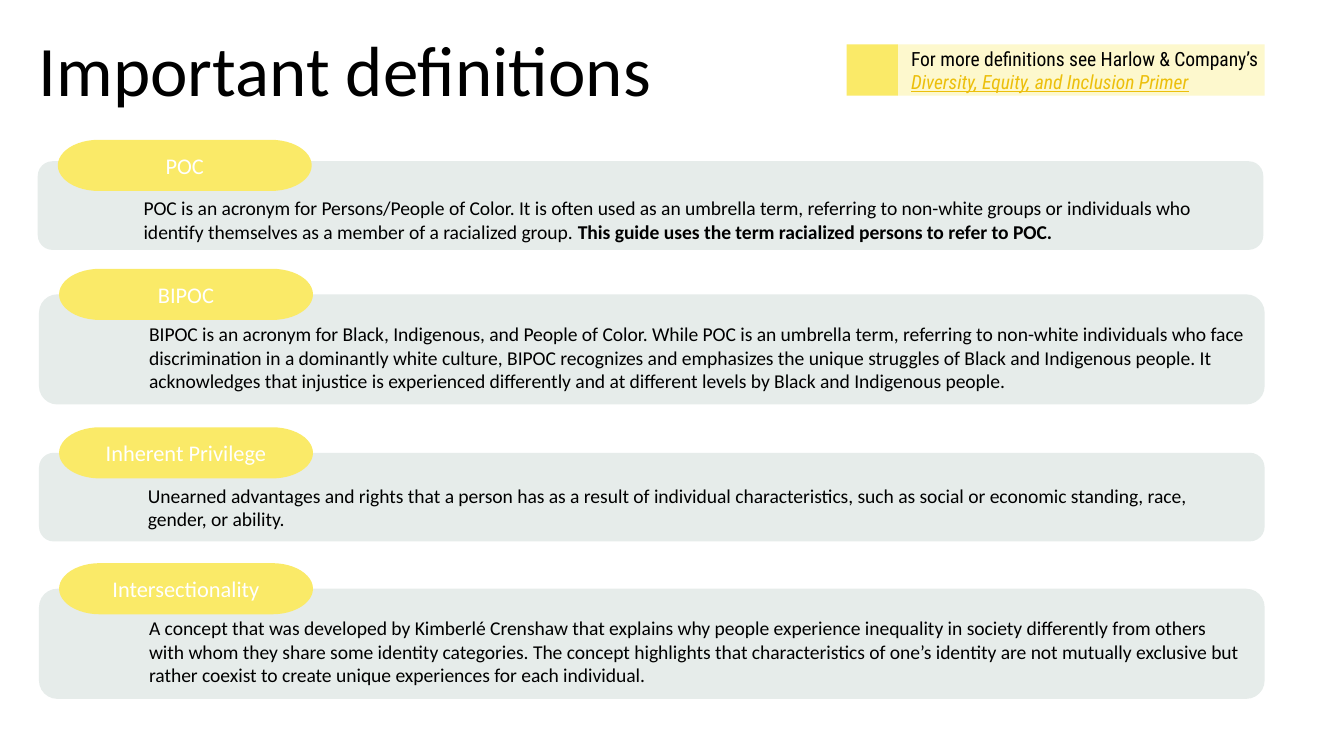
import pptx
import pptx.dml.color
import pptx.enum.shapes
import pptx.enum.text
import pptx.util

Pt = pptx.util.Pt
RGBColor = pptx.dml.color.RGBColor
SHAPE = pptx.enum.shapes.MSO_SHAPE
ANCHOR = pptx.enum.text.MSO_ANCHOR
ALIGN = pptx.enum.text.PP_ALIGN

BLACK = RGBColor(0x00, 0x00, 0x00)
WHITE = RGBColor(0xFF, 0xFF, 0xFF)
YELLOW = RGBColor(0xFA, 0xEA, 0x68)
PALE_YELLOW = RGBColor(0xFD, 0xF8, 0xCD)
PALE_GREEN = RGBColor(0xE6, 0xEC, 0xEA)
GOLD = RGBColor(0xEC, 0xBF, 0x0B)

TITLE = {"name": "Calibri", "size": Pt(38)}
BODY = {"name": "Calibri", "size": Pt(10.5)}
BOLD = {**BODY, "bold": True}
LABEL = {"name": "Calibri", "size": Pt(12), "color": WHITE}
CALLOUT = {"name": "Roboto Condensed", "size": Pt(10.5)}
LINK = {**CALLOUT, "color": GOLD, "italic": True, "underline": True}
CALLOUT_MARGINS = {"margin_top": 0, "margin_bottom": 0, "margin_right": 0}

PANEL_WIDTH = 656.6
PILL_WIDTH, PILL_HEIGHT = 136, 27.4
PILL_INDENT = 10.8
TEXT_INDENT = 49

# Panel left, top, height, rise of the pill above it, label, text
DEFINITIONS = [
    (20.9, 157.7, 59, 13.7, "BIPOC",
     "BIPOC is an acronym for Black, Indigenous, and People of Color. While POC is an "
     "umbrella term, referring to non-white individuals who face discrimination in a "
     "dominantly white culture, BIPOC recognizes and emphasizes the unique struggles of "
     "Black and Indigenous people. It acknowledges that injustice is experienced "
     "differently and at different levels by Black and Indigenous people."),
    (20.9, 315.4, 59, 13.7, "Intersectionality",
     "A concept that was developed by Kimberlé Crenshaw that explains why people "
     "experience inequality in society differently from others with whom they share some "
     "identity categories. The concept highlights that characteristics of one’s identity "
     "are not mutually exclusive but rather coexist to create unique experiences for each "
     "individual."),
    (20.9, 242.6, 47.5, 13.7, "Inherent Privilege",
     "Unearned advantages and rights that a person has as a result of individual "
     "characteristics, such as social or economic standing, race, gender, or ability."),
    (20.2, 86.4, 47.5, 11.5, "POC", None),
]
POC_RUNS = [
    ("POC is an acronym for Persons/People of Color. It is often used as an umbrella term, "
     "referring to non-white groups or individuals who identify themselves as a member of a "
     "racialized group. ", BODY),
    ("This guide uses the term racialized persons to refer to POC.", BOLD),
]


def write_text(shape, runs, anchor, align=ALIGN.LEFT, indent=0):
    """Write (text, format) runs as the single paragraph of a shape."""
    frame = shape.text_frame
    frame.word_wrap = True
    frame.vertical_anchor = anchor
    paragraph = frame.paragraphs[0]
    paragraph.alignment = align
    if indent:
        properties = paragraph._p.get_or_add_pPr()
        properties.set("marL", str(Pt(indent)))
        properties.set("indent", "0")
    for text, values in runs:
        run = paragraph.add_run()
        run.text = text
        run.font.color.rgb = values.get("color", BLACK)
        for name, value in values.items():
            if name != "color":
                setattr(run.font, name, value)
    return paragraph


def add_filled_shape(shapes, kind, left, top, width, height, color):
    shape = shapes.add_shape(kind, Pt(left), Pt(top), Pt(width), Pt(height))
    shape.shadow.inherit = False
    shape.fill.solid()
    shape.fill.fore_color.rgb = color
    shape.line.fill.background()
    return shape


def add_text_box(slide, left, top, width, height, runs, anchor, indent=0):
    box = slide.shapes.add_textbox(Pt(left), Pt(top), Pt(width), Pt(height))
    return write_text(box, runs, anchor, indent=indent)


def add_definition(slide, left, top, height, rise, label, text):
    """Add a rounded panel with its label pill overlapping the top edge."""
    shapes = slide.shapes.add_group_shape().shapes
    panel = add_filled_shape(shapes, SHAPE.ROUNDED_RECTANGLE, left, top,
                             PANEL_WIDTH, height, PALE_GREEN)
    if text:
        write_text(panel, [(text, BODY)], ANCHOR.BOTTOM, indent=TEXT_INDENT)
    pill = add_filled_shape(shapes, SHAPE.FLOWCHART_TERMINATOR, left + PILL_INDENT,
                            top - rise, PILL_WIDTH, PILL_HEIGHT, YELLOW)
    write_text(pill, [(label, LABEL)], ANCHOR.MIDDLE, ALIGN.CENTER)


def add_callout(slide, left, top, width, height):
    """Add a pale two-line note with a square marker at its left end."""
    shapes = slide.shapes.add_group_shape().shapes
    note = add_filled_shape(shapes, SHAPE.RECTANGLE, left + height, top,
                            width - height, height, PALE_YELLOW)
    write_text(note, [("For more definitions see Harlow & Company’s ", CALLOUT),
                      ("Diversity, Equity, and Inclusion Primer", LINK)], ANCHOR.MIDDLE)
    for name, value in CALLOUT_MARGINS.items():
        setattr(note.text_frame, name, Pt(value))
    add_filled_shape(shapes, SHAPE.RECTANGLE, left, top, height, height, YELLOW)


def main():
    presentation = pptx.Presentation()
    presentation.slide_width = Pt(720)
    presentation.slide_height = Pt(405)
    slide = presentation.slides.add_slide(presentation.slide_layouts[6])

    title = add_text_box(slide, 13.7, 5.8, 430, 67,
                         [("Important definitions", TITLE)], ANCHOR.MIDDLE)
    title.line_spacing = 0.9
    add_callout(slide, 453.6, 23.8, 223.9, 27.4)
    for definition in DEFINITIONS:
        add_definition(slide, *definition)
    add_text_box(slide, 4.3, 101.5, 661, 32.4, POC_RUNS, ANCHOR.TOP, indent=65.5)

    presentation.save("out.pptx")


if __name__ == "__main__":
    main()
